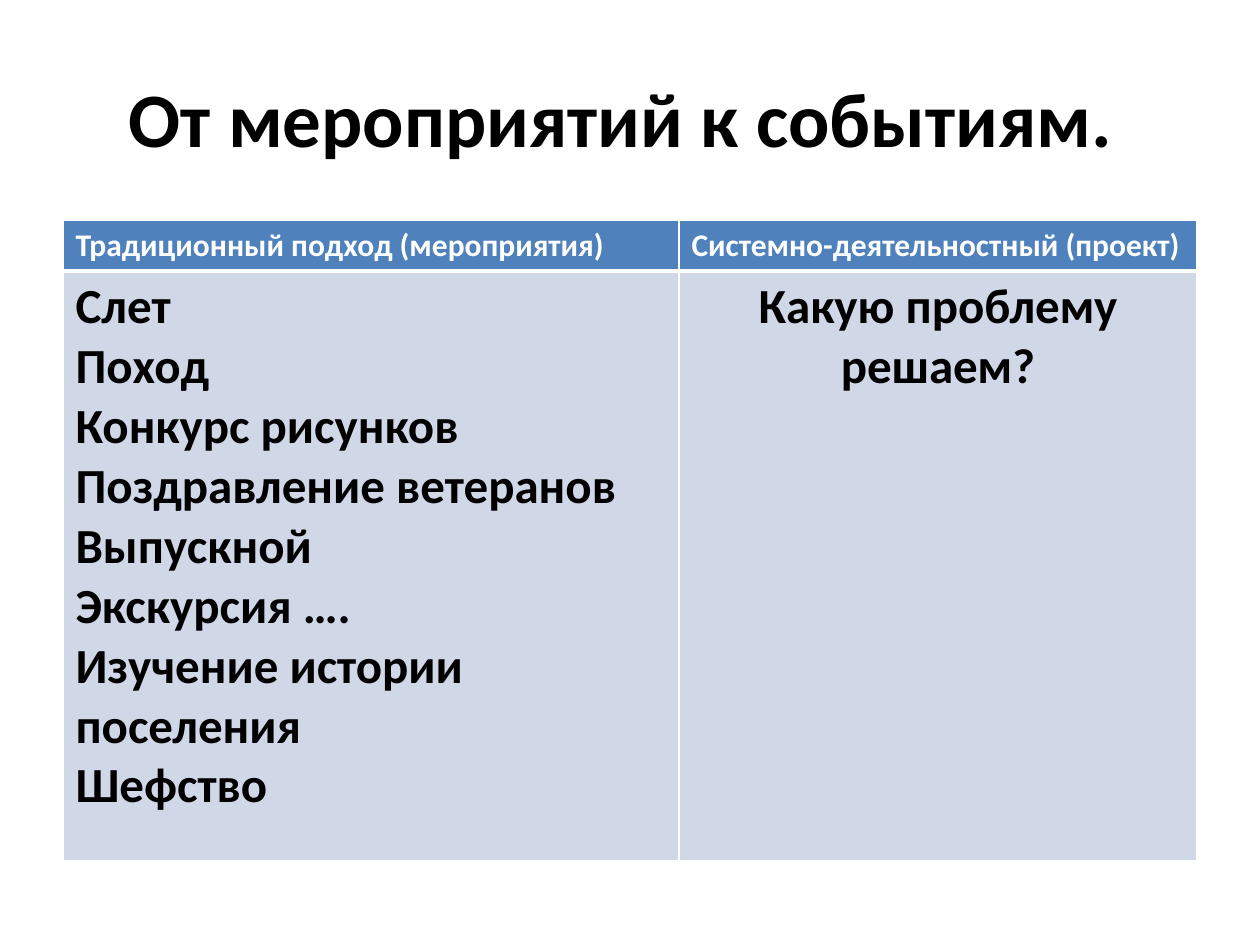
import dataclasses
import pptx
import pptx.dml.color
import pptx.enum.text
import pptx.oxml
import pptx.oxml.ns
import pptx.util

PX = 914400 // 126
WHITE = pptx.dml.color.RGBColor(0xFF, 0xFF, 0xFF)
BLACK = pptx.dml.color.RGBColor(0, 0, 0)
BLUE = pptx.dml.color.RGBColor(0x4F, 0x81, 0xBD)
PALE = pptx.dml.color.RGBColor(0xD0, 0xD8, 0xE8)
LEFT = pptx.enum.text.PP_ALIGN.LEFT
MID = pptx.enum.text.PP_ALIGN.CENTER


@dataclasses.dataclass
class Look:
    size: int
    color: pptx.dml.color.RGBColor


@dataclasses.dataclass
class Cell:
    row: int
    col: int
    lines: list[str]
    look: Look
    fill: pptx.dml.color.RGBColor
    align: int = LEFT
    base: int = 1


HEAD = Look(18, WHITE)
BODY = Look(28, BLACK)
COLS = [616, 518]
ROWS = [51, 590]
CELLS = [
    Cell(0, 0, ["Традиционный подход (мероприятия)"], HEAD, BLUE, base=3),
    Cell(0, 1, ["Системно-деятельностный (проект)"], HEAD, BLUE, base=3),
    Cell(1, 0, ["Слет", "Поход", "Конкурс рисунков", "Поздравление ветеранов",
                "Выпускной", "Экскурсия ….", "Изучение истории поселения",
                "Шефство"], BODY, PALE),
    Cell(1, 1, ["Какую проблему решаем?"], BODY, PALE, MID),
]


def px(n: int) -> int:
    return pptx.util.Emu(n * PX)


def write(frame, lines: list[str], look: Look, align: int) -> None:
    form = {"name": "Calibri", "size": pptx.util.Pt(look.size), "bold": True}
    for i, line in enumerate(lines):
        para = frame.paragraphs[0] if i == 0 else frame.add_paragraph()
        para.alignment = align
        run = para.add_run()
        run.text = line
        for key, val in form.items():
            setattr(run.font, key, val)
        run.font.color.rgb = look.color


def edge(cell, side: str, width: int) -> None:
    space = pptx.oxml.ns.nsdecls("a")
    line = pptx.oxml.parse_xml(
        f'<a:{side} {space} w="{pptx.util.Pt(width)}"><a:solidFill>'
        f'<a:srgbClr val="{WHITE}"/></a:solidFill></a:{side}>')
    cell._tc.get_or_add_tcPr().append(line)


def draw(table, item: Cell) -> None:
    cell = table.cell(item.row, item.col)
    write(cell.text_frame, item.lines, item.look, item.align)
    top = 3 if item.row else 1
    for side, width in {"lnL": 1, "lnR": 1, "lnT": top, "lnB": item.base}.items():
        edge(cell, side, width)
    cell.fill.solid()
    cell.fill.fore_color.rgb = item.fill


def main() -> None:
    deck = pptx.Presentation()
    deck.slide_width = px(1260)
    deck.slide_height = px(945)
    slide = deck.slides.add_slide(deck.slide_layouts[6])

    title = slide.shapes.add_textbox(px(63), px(38), px(1134), px(157))
    frame = title.text_frame
    form = {"word_wrap": True,
            "vertical_anchor": pptx.enum.text.MSO_ANCHOR.MIDDLE}
    for key, val in form.items():
        setattr(frame, key, val)
    write(frame, ["От мероприятий к событиям. "], Look(44, BLACK), MID)

    table = slide.shapes.add_table(
        len(ROWS), len(COLS), px(63), px(220),
        px(sum(COLS)), px(sum(ROWS))).table
    for col, width in zip(table.columns, COLS):
        col.width = px(width)
    for row, height in zip(table.rows, ROWS):
        row.height = px(height)
    for item in CELLS:
        draw(table, item)
    deck.save("out.pptx")


if __name__ == "__main__":
    main()
